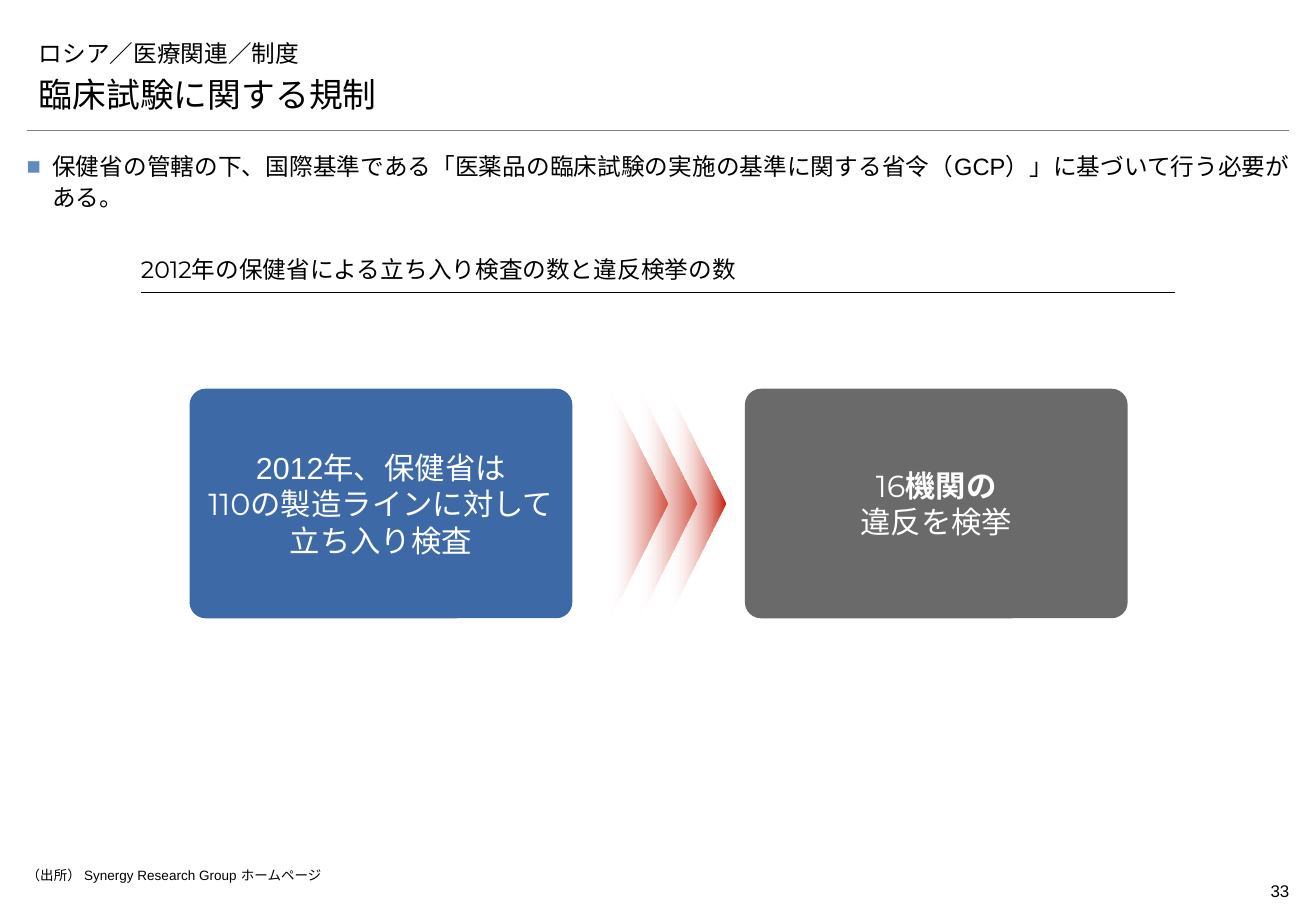
from lxml import etree
from pptx import Presentation
from pptx import util as u
from pptx.dml.color import RGBColor
from pptx.enum import shapes, text
from pptx.oxml.ns import qn

SCALE = 9144
BLACK = RGBColor(0x00, 0x00, 0x00)
WHITE = RGBColor(0xFF, 0xFF, 0xFF)
RULE_GRAY = RGBColor(0x7F, 0x7F, 0x7F)
INSPECTION_BLUE = RGBColor(0x3D, 0x6A, 0xA7)
VIOLATION_GRAY = RGBColor(0x6A, 0x6A, 0x6A)
ARROW_RED = RGBColor(0xC7, 0x1F, 0x0D)
BULLET_BLUE = RGBColor(0x5F, 0x8A, 0xC3)
LATIN = "Arial"
HEADING = "Montserrat"
JAPANESE = "Noto Sans CJK JP"


def px(value):
    return u.Emu(value * SCALE)


def style_span(span, size, font, color, bold=False):
    span.font.size = u.Pt(size)
    span.font.name = font
    span.font.bold = bold
    span.font.color.rgb = color
    etree.SubElement(span._r.get_or_add_rPr(), qn("a:ea"), typeface=JAPANESE)


def set_frame(frame, anchor, insets):
    frame.word_wrap = True
    frame.vertical_anchor = anchor
    frame.margin_left, frame.margin_top, frame.margin_right, frame.margin_bottom = map(px, insets)


def add_label(page, place, wording, size, font, insets=(10, 5, 10, 5),
              anchor=text.MSO_ANCHOR.BOTTOM, align=text.PP_ALIGN.LEFT):
    box = page.shapes.add_textbox(*map(px, place))
    set_frame(box.text_frame, anchor, insets)
    box.text_frame.text = wording
    para = box.text_frame.paragraphs[0]
    para.alignment = align
    style_span(para.runs[0], size, font, BLACK)
    return para


def make_bullet(para):
    props = para._p.get_or_add_pPr()
    props.set("marL", str(px(21)))
    props.set("indent", str(px(-21)))
    color = etree.SubElement(props, qn("a:buClr"))
    etree.SubElement(color, qn("a:srgbClr"), val=str(BULLET_BLUE))
    etree.SubElement(props, qn("a:buFont"), typeface=LATIN)
    etree.SubElement(props, qn("a:buChar"), char="■")
    para.line_spacing = 1.1
    para.space_after = u.Pt(2)


def add_rule(page, left, right, top, color, width):
    rule = page.shapes.add_connector(
        shapes.MSO_CONNECTOR.STRAIGHT, px(left), px(top), px(right), px(top))
    rule.line.color.rgb = color
    rule.line.width = u.Pt(width)
    etree.SubElement(rule._element.spPr, qn("a:effectLst"))


def add_card(page, left, color, lines, insets):
    card = page.shapes.add_shape(
        shapes.MSO_SHAPE.ROUNDED_RECTANGLE, px(left), px(320), px(315), px(189))
    card.adjustments[0] = 0.07
    card.shadow.inherit = False
    card.fill.solid()
    card.fill.fore_color.rgb = color
    card.line.fill.background()
    set_frame(card.text_frame, text.MSO_ANCHOR.MIDDLE, insets)
    para = card.text_frame.paragraphs[0]
    para.alignment = text.PP_ALIGN.CENTER
    for index, line in enumerate(lines):
        if index:
            para.add_line_break()
        for wording, font, bold in line:
            span = para.add_run()
            span.text = wording
            style_span(span, 18, font, WHITE, bold)


def add_arrow(page, left):
    arrow = page.shapes.add_shape(
        shapes.MSO_SHAPE.ISOSCELES_TRIANGLE, px(left), px(391), px(189), px(47))
    arrow.rotation = 90
    arrow.shadow.inherit = False
    arrow.line.fill.background()
    arrow.fill.gradient()
    arrow.fill.gradient_angle = 270
    for stop, color, position in zip(arrow.fill.gradient_stops, (ARROW_RED, WHITE), (0, 1)):
        stop.color.rgb = color
        stop.position = position
    faded = arrow._element.spPr.findall(".//" + qn("a:srgbClr"))[-1]
    etree.SubElement(faded, qn("a:alpha"), val="0")


def main():
    deck = Presentation()
    deck.slide_width, deck.slide_height = px(1083), px(750)
    page = deck.slides.add_slide(deck.slide_layouts[6])

    add_rule(page, 22, 1061, 107, RULE_GRAY, 0.25)
    add_label(page, (983, 720, 78, 27), "33", 10, LATIN, (0, 5, 0, 5),
              text.MSO_ANCHOR.TOP, text.PP_ALIGN.RIGHT)
    add_label(page, (22, 21, 1039, 39), "ロシア／医療関連／制度", 14, HEADING)
    add_label(page, (22, 60, 1039, 39), "臨床試験に関する規制", 20, HEADING)
    summary = add_label(
        page, (22, 123, 1039, 24),
        "保健省の管轄の下、国際基準である「医薬品の臨床試験の実施の基準に関する省令（GCP）」に基づいて行う必要がある。",
        14, LATIN, (0, 0, 0, 0), text.MSO_ANCHOR.TOP, text.PP_ALIGN.JUSTIFY)
    make_bullet(summary)

    add_rule(page, 116, 967, 241, BLACK, 0.75)
    add_label(page, (116, 210, 850, 31), "2012年の保健省による立ち入り検査の数と違反検挙の数",
              14, HEADING, (0, 5, 0, 8))

    add_card(page, 156, INSPECTION_BLUE, [
        [("2012年、保健省は", LATIN, False)],
        [("110", HEADING, False), ("の製造ラインに対して", LATIN, False)],
        [("立ち入り検査", JAPANESE, False)],
    ], (4, 5, 4, 5))
    add_card(page, 613, VIOLATION_GRAY, [
        [("16", HEADING, False), ("機関の", LATIN, True)],
        [("違反を検挙", JAPANESE, False)],
    ], (10, 5, 10, 5))
    for step in range(3):
        add_arrow(page, 431 + 24 * step)

    add_label(page, (22, 714, 1000, 16), "（出所） Synergy Research Group ホームページ",
              8, LATIN, (0, 0, 0, 0), text.MSO_ANCHOR.TOP)
    deck.save("out.pptx")


if __name__ == "__main__":
    main()
